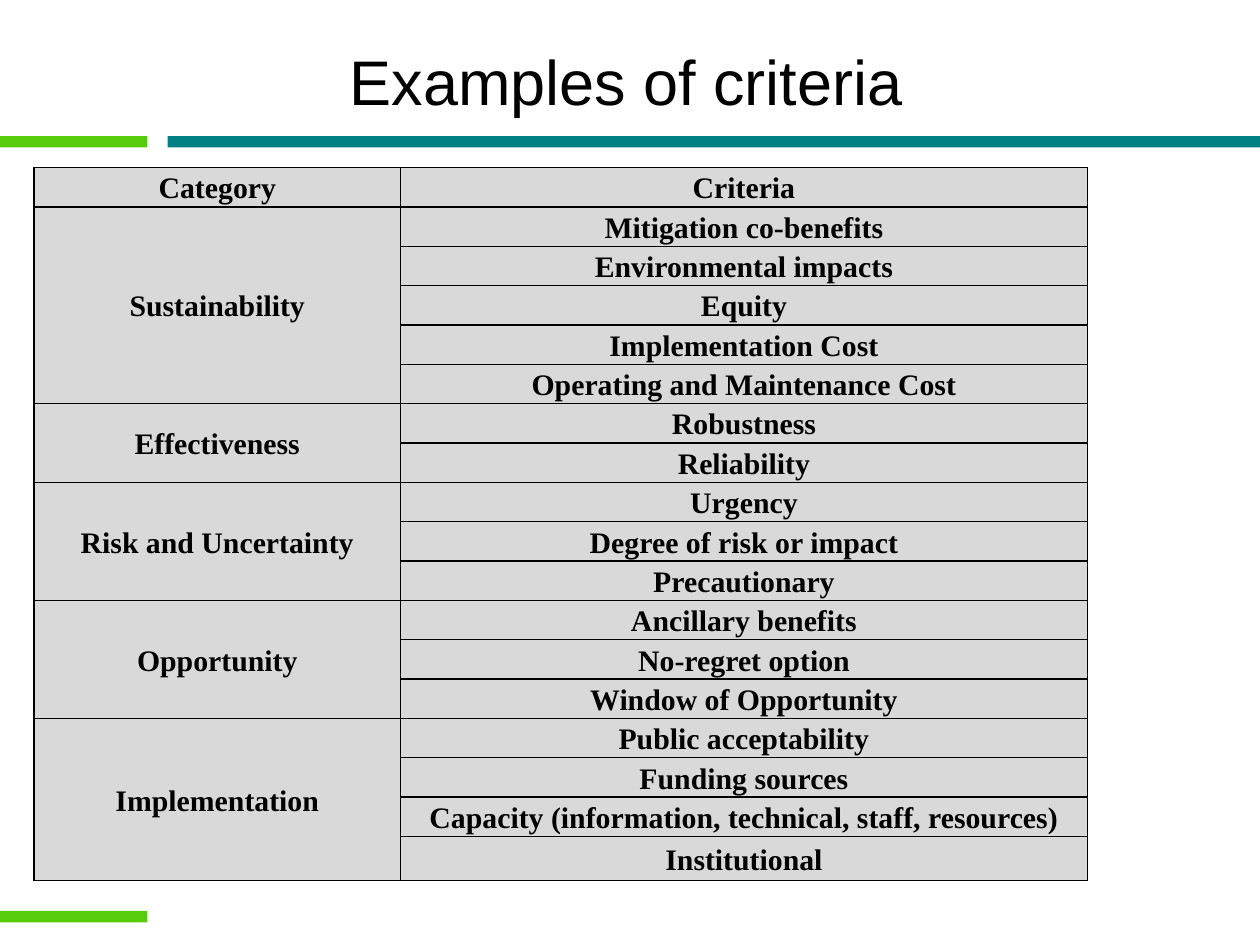
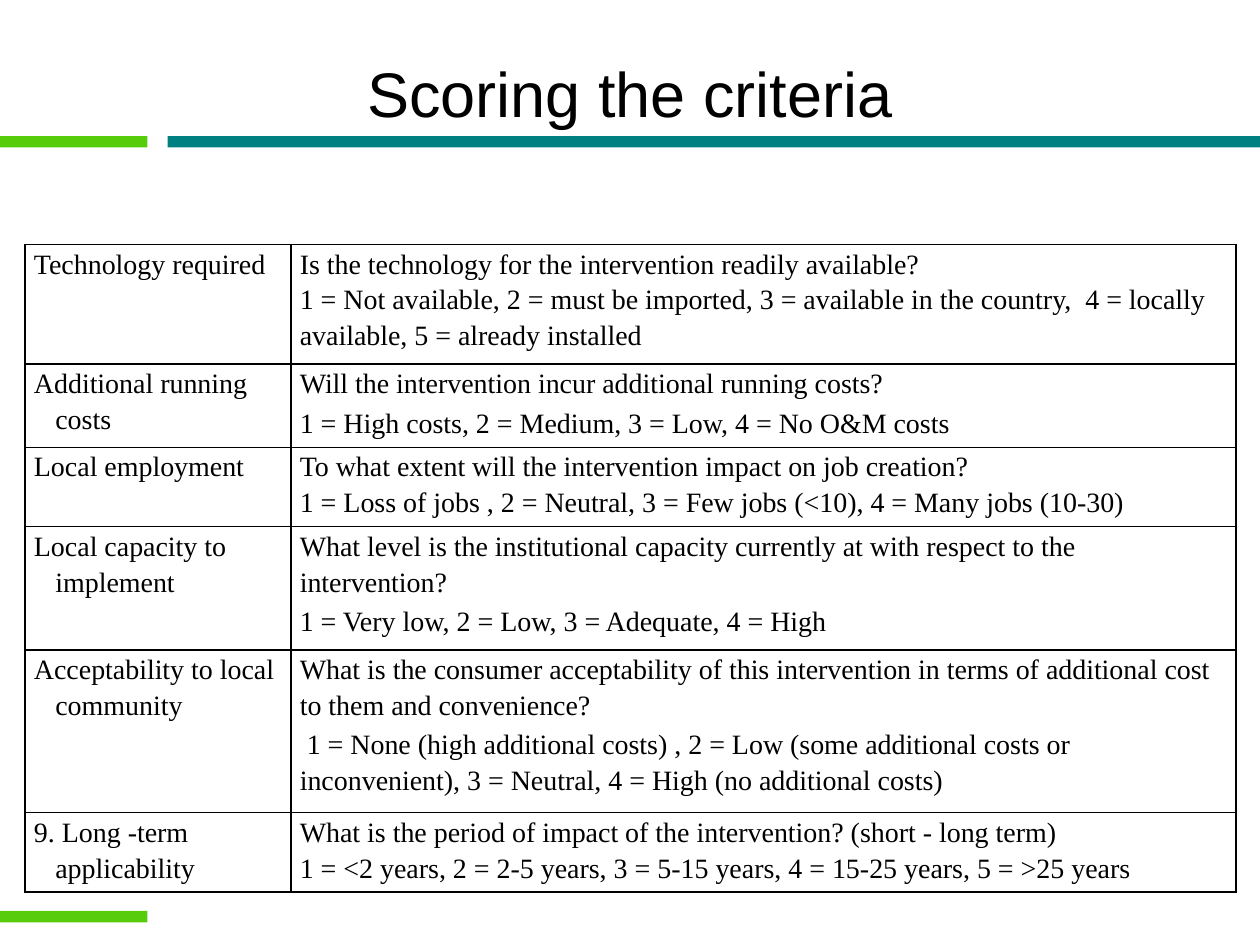
from lxml.etree import SubElement
from pptx import Presentation
from pptx.dml.color import RGBColor
from pptx.enum.shapes import MSO_SHAPE
from pptx.enum.text import MSO_ANCHOR, PP_ALIGN
from pptx.oxml.ns import qn
from pptx.util import Inches, Pt

BLACK, WHITE, GREY = "000000", "FFFFFF", "D9D9D9"
TEAL, GREEN = "008080", "56CC0B"
TITLE_FONT, TABLE_FONT = "Arial", "Times New Roman"

CRITERIA = {
    "Sustainability": ["Mitigation co-benefits", "Environmental impacts", "Equity",
                       "Implementation Cost", "Operating and Maintenance Cost"],
    "Effectiveness": ["Robustness", "Reliability"],
    "Risk and Uncertainty": ["Urgency", "Degree of risk or impact", "Precautionary"],
    "Opportunity": ["Ancillary benefits", "No-regret option", "Window of Opportunity"],
    "Implementation": ["Public acceptability", "Funding sources",
                       "Capacity (information, technical, staff, resources)",
                       "Institutional"],
}

# Criterion, question, scale, points around the scale, row height
SCORING = [
    ("Technology required",
     "Is the technology for the intervention readily available?",
     "1 = Not available, 2 = must be imported, 3 = available in the country,  "
     "4 = locally available, 5 = already installed", 0, 0.95),
    ("Additional running costs",
     "Will the intervention incur additional running costs?",
     "1 = High costs, 2 = Medium, 3 = Low, 4 = No O&M costs", 2, 0.66),
    ("Local employment",
     "To what extent will the intervention impact on job creation?",
     "1 = Loss of jobs , 2 = Neutral, 3 = Few jobs (<10), 4 = Many jobs (10-30)", 0, 0.63),
    ("Local capacity to implement",
     "What level is the institutional capacity currently at with respect to the intervention?",
     "1 = Very low, 2 = Low, 3 = Adequate, 4 = High", 2, 0.98),
    ("Acceptability to local community",
     "What is the consumer acceptability of this intervention in terms of additional cost "
     "to them and convenience?",
     " 1 = None (high additional costs) , 2 = Low (some additional costs or inconvenient), "
     "3 = Neutral, 4 = High (no additional costs)", 2, 1.29),
    ("9. Long -term applicability",
     "What is the period of impact of the intervention? (short - long term)",
     "1 = <2 years, 2 = 2-5 years, 3 = 5-15 years, 4 = 15-25 years, 5 = >25 years", 0, 0.63),
]


def color(hex_string):
    return RGBColor.from_string(hex_string)


def style_font(font, name, size, bold=False):
    font.name, font.size, font.bold = name, Pt(size), bold
    font.color.rgb = color(BLACK)


# Shared parts of a page
def add_band(page, left, top, width, fill):
    band = page.shapes.add_shape(MSO_SHAPE.RECTANGLE, Inches(left), Inches(top),
                                 Inches(width), Inches(0.09))
    band.shadow.inherit = False
    band.fill.solid()
    band.fill.fore_color.rgb = color(fill)
    band.line.fill.background()


def add_title(page, text, left, top):
    box = page.shapes.add_textbox(Inches(left), Inches(top), Inches(9), Inches(1.25))
    frame = box.text_frame
    frame.word_wrap = True
    frame.text = text
    para = frame.paragraphs[0]
    para.alignment = PP_ALIGN.CENTER
    style_font(para.runs[0].font, TITLE_FONT, 36)


def add_page(deck, title, left, top):
    page = deck.slides.add_slide(deck.slide_layouts[6])
    add_band(page, 1.33, 1.08, 8.67, TEAL)
    add_band(page, 0, 1.08, 1.17, GREEN)
    add_band(page, 0, 7.23, 1.17, GREEN)
    add_title(page, title, left, top)
    return page


# Tables
def add_borders(cell):
    properties = cell._tc.get_or_add_tcPr()
    for side in ("a:lnL", "a:lnR", "a:lnT", "a:lnB"):
        line = SubElement(properties, qn(side), w=str(Pt(1)))
        SubElement(SubElement(line, qn("a:solidFill")), qn("a:srgbClr"), val=BLACK)


def add_grid(page, left, top, widths, heights, fill):
    frame = page.shapes.add_table(len(heights), len(widths), Inches(left), Inches(top),
                                  Inches(sum(widths)), Inches(sum(heights)))
    table = frame.table
    table.first_row = table.horz_banding = False
    for column, width in zip(table.columns, widths):
        column.width = Inches(width)
    for row, height in zip(table.rows, heights):
        row.height = Inches(height)
    for cell in table.iter_cells():
        add_borders(cell)
        cell.fill.solid()
        cell.fill.fore_color.rgb = color(fill)
        cell.margin_left = cell.margin_right = Inches(0.07)
        cell.margin_top = cell.margin_bottom = 0
    return table


def write_cell(cell, text, size, line_spacing, bold=False, alignment=PP_ALIGN.LEFT,
               anchor=MSO_ANCHOR.TOP):
    cell.text_frame.text = text
    cell.vertical_anchor = anchor
    for para in cell.text_frame.paragraphs:
        para.alignment = alignment
        para.line_spacing = line_spacing
        for span in para.runs:
            style_font(span.font, TABLE_FONT, size, bold)


def hang_indent(para, inches):
    properties = para._p.get_or_add_pPr()
    properties.set("marL", str(Inches(inches)))
    properties.set("indent", str(-Inches(inches)))


def write_heading(cell, text):
    # The tighter spacing leaves room for the borders inside the row height
    write_cell(cell, text, 17, 1.1, True, PP_ALIGN.CENTER, MSO_ANCHOR.MIDDLE)


def add_criteria_table(page):
    count = sum(len(criteria) for criteria in CRITERIA.values())
    table = add_grid(page, 0.27, 1.33, [2.91, 5.45], [0.31] * count + [0.35], GREY)
    write_heading(table.cell(0, 0), "Category")
    write_heading(table.cell(0, 1), "Criteria")
    row = 1
    for category, criteria in CRITERIA.items():
        table.cell(row, 0).merge(table.cell(row + len(criteria) - 1, 0))
        write_heading(table.cell(row, 0), category)
        for criterion in criteria:
            write_heading(table.cell(row, 1), criterion)
            row += 1


def add_scoring_table(page):
    heights = [entry[-1] for entry in SCORING]
    table = add_grid(page, 0.2, 1.94, [2.11, 7.5], heights, WHITE)
    for row, (criterion, question, scale, gap, _) in enumerate(SCORING):
        name_cell, score_cell = table.cell(row, 0), table.cell(row, 1)
        write_cell(name_cell, criterion, 16, 1.15)
        hang_indent(name_cell.text_frame.paragraphs[0], 0.17)
        write_cell(score_cell, f"{question}\n{scale}", 16, 1.15)
        scale_para = score_cell.text_frame.paragraphs[1]
        scale_para.space_before = scale_para.space_after = Pt(gap)


def main():
    deck = Presentation()
    deck.slide_width, deck.slide_height = Inches(10), Inches(7.5)
    add_criteria_table(add_page(deck, "Examples of criteria", 0.47, 0.29))
    add_scoring_table(add_page(deck, "Scoring the criteria", 0.5, 0.38))
    deck.save("out.pptx")


if __name__ == "__main__":
    main()
